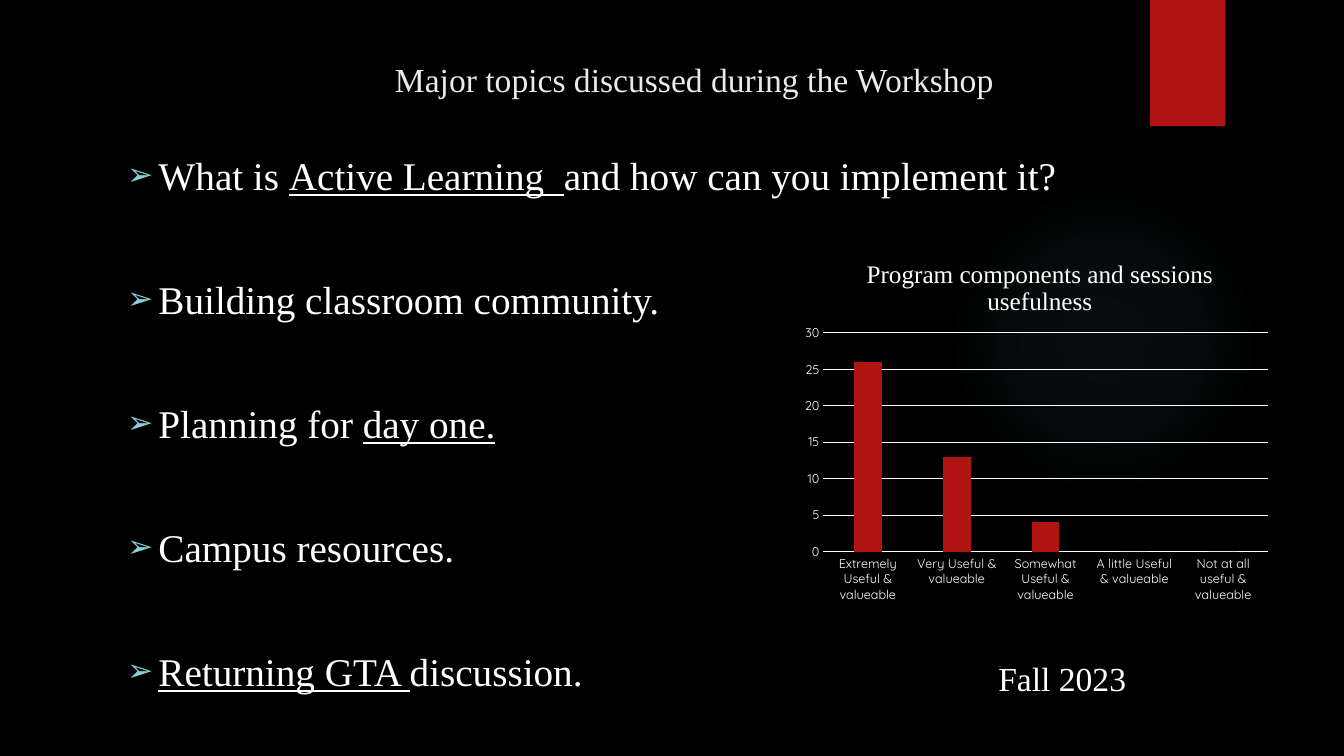
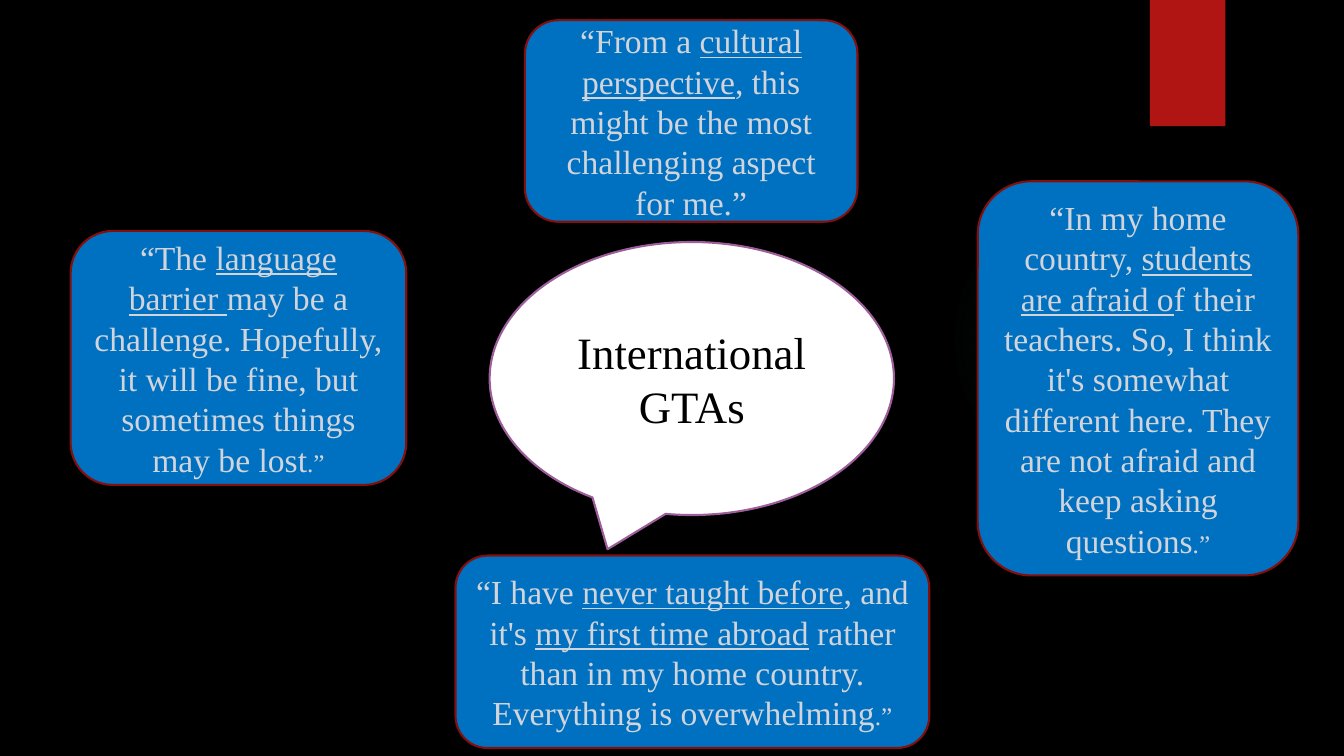
from dataclasses import dataclass

from lxml import etree
from pptx import Presentation
from pptx.chart.data import CategoryChartData
from pptx.dml.color import RGBColor
from pptx.enum.chart import XL_CHART_TYPE, XL_TICK_MARK
from pptx.enum.shapes import MSO_SHAPE
from pptx.enum.text import MSO_ANCHOR, MSO_AUTO_SIZE, PP_ALIGN
from pptx.oxml import parse_xml
from pptx.oxml.ns import nsdecls, qn
from pptx.util import Cm, Pt


@dataclass(frozen=True)
class Theme:
    """Colours, fonts and type sizes shared by the slides."""

    background: str = "000000"
    accent: str = "B01513"
    glow: str = "50B9C1"
    title: str = "EBEBEB"
    light: str = "FFFFFF"
    dark: str = "000000"
    bullet: str = "8AD0D6"
    quote: str = "D1D5DB"
    quote_fill: str = "0070C0"
    quote_line: str = "82100E"
    callout_line: str = "9E5E9B"
    font: str = "Times New Roman"
    chart_font: str = "Quicksand"
    callout_size: int = 32
    body_size: int = 28
    text_size: int = 24
    small_size: int = 18
    axis_size: int = 9


THEME = Theme()

TOPICS = (
    "What is _Active Learning  _and how can you implement it?",
    "Building classroom community.",
    "Planning for _day one._",
    "Campus resources.",
    "_Returning GTA _discussion.",
)

USEFULNESS = {
    "Extremely Useful & valueable": 26,
    "Very Useful & valueable": 13,
    "Somewhat Useful & valueable": 4,
    "A little Useful & valueable": 0,
    "Not at all useful & valueable": 0,
}

QUOTES = (
    ((24.64, 4.57, 8.08, 9.93),
     "“In my home country, _students are afraid o_f their teachers. So, I think it's "
     "somewhat different here. They are not afraid and keep asking questions", ".”"),
    ((13.23, 0.51, 8.38, 5.08),
     "“From a _cultural perspective_, this might be the most challenging aspect for me.”", ""),
    ((1.78, 5.82, 8.46, 6.4),
     "“The _language barrier _may be a challenge. Hopefully, it will be fine, but "
     "sometimes things may be lost", ".”"),
    ((11.48, 14, 11.94, 4.85),
     "“I have _never taught before_, and it's _my first time abroad_ rather than in my "
     "home country. Everything is overwhelming", ".”"),
)


def lengths(box):
    """Turn a box in centimetres into lengths."""
    return [Cm(value) for value in box]


def style_font(font, size, color, name=THEME.font):
    """Set the size, colour and typeface of a font."""
    font.size = Pt(size)
    font.name = name
    font.color.rgb = RGBColor.from_string(color)


def write_runs(paragraph, text, size, color):
    """Write text whose parts between underscores are underlined."""
    for index, part in enumerate(text.split("_")):
        if part:
            run = paragraph.add_run()
            run.text = part
            style_font(run.font, size, color)
            if index % 2:
                run.font.underline = True


def add_bullet(paragraph):
    """Give a paragraph an arrow bullet with a hanging indent."""
    properties = paragraph._p.get_or_add_pPr()
    properties.set("marL", str(Cm(2.06)))
    properties.set("indent", str(Cm(-0.79)))
    color = etree.SubElement(properties, qn("a:buClr"))
    etree.SubElement(color, qn("a:srgbClr"), val=THEME.bullet)
    etree.SubElement(properties, qn("a:buSzPct"), val="80000")
    etree.SubElement(properties, qn("a:buChar"), char="➢")


def add_box(slide, kind, box, fill, line=None):
    """Add a filled preset shape, outlined when a line colour is given."""
    shape = slide.shapes.add_shape(kind, *lengths(box))
    shape.shadow.inherit = False
    shape.fill.solid()
    shape.fill.fore_color.rgb = RGBColor.from_string(fill)
    if line:
        shape.line.color.rgb = RGBColor.from_string(line)
        shape.line.width = Pt(1.5)
    else:
        shape.line.fill.background()
    return shape


def add_text_shape(slide, kind, box, fill, line, text, size, color, closing=""):
    """Add a shape with centred text and an optional smaller closing."""
    frame = add_box(slide, kind, box, fill, line).text_frame
    frame.word_wrap = True
    frame.vertical_anchor = MSO_ANCHOR.MIDDLE
    paragraph = frame.paragraphs[0]
    paragraph.alignment = PP_ALIGN.CENTER
    write_runs(paragraph, text, size, color)
    write_runs(paragraph, closing, THEME.small_size, color)


def fade_fill(shape, color):
    """Replace a solid fill with a faint radial glow."""
    stops = "".join(
        f'<a:gs pos="{position}000"><a:srgbClr val="{color}">'
        f'<a:alpha val="{alpha}000"/></a:srgbClr></a:gs>'
        for position, alpha in ((0, 7), (36, 6), (69, 0))
    )
    gradient = parse_xml(
        f'<a:gradFill {nsdecls("a")}><a:gsLst>{stops}</a:gsLst><a:path path="circle">'
        '<a:fillToRect l="50000" t="50000" r="50000" b="50000"/></a:path></a:gradFill>'
    )
    properties = shape.element.spPr
    properties.replace(properties.find(qn("a:solidFill")), gradient)


def decorate_master(presentation, slide):
    """Put the background, glow and red band on the slide master."""
    master = presentation.slide_master
    master.background.fill.solid()
    master.background.fill.fore_color.rgb = RGBColor.from_string(THEME.background)
    glow = add_box(slide, MSO_SHAPE.OVAL, (23.9, 4.65, 7.82, 7.82), THEME.glow)
    fade_fill(glow, THEME.glow)
    band = add_box(slide, MSO_SHAPE.RECTANGLE, (28.98, 0, 1.9, 3.18), THEME.accent)
    for offset, shape in enumerate((glow, band)):
        shape.element.xpath(".//p:cNvPr")[0].set("id", str(20 + offset))
        master.shapes.element.insert(2 + offset, shape.element)


def place_placeholder(placeholder, box):
    """Move a placeholder and return its text frame without autofit."""
    placeholder.left, placeholder.top, placeholder.width, placeholder.height = lengths(box)
    placeholder.text_frame.auto_size = MSO_AUTO_SIZE.NONE
    return placeholder.text_frame


def fill_title(slide, text):
    """Write the slide title."""
    frame = place_placeholder(slide.shapes.title, (9.7, 1.37, 16, 1.22))
    frame.vertical_anchor = MSO_ANCHOR.MIDDLE
    paragraph = frame.paragraphs[0]
    paragraph.alignment = PP_ALIGN.JUSTIFY
    write_runs(paragraph, text, THEME.text_size, THEME.title)


def fill_topics(slide, topics):
    """Write the bulleted topics in the body placeholder."""
    frame = place_placeholder(slide.placeholders[1], (1.68, 2.34, 26.47, 15.06))
    frame.margin_top = Cm(1.47)
    frame.vertical_anchor = MSO_ANCHOR.TOP
    for index, topic in enumerate(topics):
        paragraph = frame.add_paragraph() if index else frame.paragraphs[0]
        paragraph.level = 1
        paragraph.space_before = Pt(55 if index else 0)
        add_bullet(paragraph)
        write_runs(paragraph, topic, THEME.body_size, THEME.light)


def set_layout(element, **shares):
    """Place a chart part by shares of the chart's size."""
    layout = element.find(qn("c:layout"))
    if layout is None:
        layout = element.makeelement(qn("c:layout"))
        element.insert(0, layout)
    manual = etree.SubElement(layout, qn("c:manualLayout"))
    if "w" in shares:
        etree.SubElement(manual, qn("c:layoutTarget"), val="inner")
    for axis in "xy":
        etree.SubElement(manual, qn(f"c:{axis}Mode"), val="edge")
    for name, share in shares.items():
        etree.SubElement(manual, qn(f"c:{name}"), val=str(share))


def style_axis(axis, line_format):
    """Set an axis's labels, ticks and visible line."""
    axis.major_tick_mark = axis.minor_tick_mark = XL_TICK_MARK.NONE
    style_font(axis.tick_labels.font, THEME.axis_size, THEME.light, THEME.chart_font)
    line_format.line.color.rgb = RGBColor.from_string(THEME.light)
    line_format.line.width = Pt(0.75)


def add_column_chart(slide, box, title, values):
    """Add a single-series column chart."""
    data = CategoryChartData()
    data.categories = list(values)
    data.add_series("Series 1", list(values.values()))
    chart = slide.shapes.add_chart(
        XL_CHART_TYPE.COLUMN_CLUSTERED, *lengths(box), data).chart
    style_font(chart.font, 10, THEME.light, THEME.chart_font)
    chart.has_legend = False
    paragraph = chart.chart_title.text_frame.paragraphs[0]
    write_runs(paragraph, title, THEME.small_size, THEME.light)
    paragraph.runs[0].font.bold = False
    set_layout(chart.chart_title.element, x=0.14, y=0.05)
    set_layout(chart.element.find(f".//{qn('c:plotArea')}"), x=0.06, y=0.26, w=0.92, h=0.58)

    plot = chart.plots[0]
    plot.gap_width = 219
    plot.overlap = -27
    plot.vary_by_categories = False
    plot.series[0].format.fill.solid()
    plot.series[0].format.fill.fore_color.rgb = RGBColor.from_string(THEME.accent)

    style_axis(chart.category_axis, chart.category_axis.format)
    value_axis = chart.value_axis
    style_axis(value_axis, value_axis.major_gridlines.format)
    value_axis.format.line.fill.background()
    value_axis.minimum_scale, value_axis.maximum_scale, value_axis.major_unit = 0, 30, 5


def add_label(slide, box, text):
    """Add a centred line of text."""
    frame = slide.shapes.add_textbox(*lengths(box)).text_frame
    frame.word_wrap = True
    frame.auto_size = MSO_AUTO_SIZE.SHAPE_TO_FIT_TEXT
    paragraph = frame.paragraphs[0]
    paragraph.alignment = PP_ALIGN.CENTER
    write_runs(paragraph, text, THEME.text_size, THEME.light)


def build_topics(slide):
    """Build the workshop topics slide."""
    fill_title(slide, "Major topics discussed during the Workshop")
    fill_topics(slide, TOPICS)
    add_column_chart(slide, (20.02, 5.92, 12.17, 9.5),
                     "Program components and sessions usefulness", USEFULNESS)
    add_label(slide, (24.66, 16.46, 4.22, 1.27), "Fall 2023")


def build_quotes(slide):
    """Build the slide of quotes around a speech bubble."""
    add_text_shape(slide, MSO_SHAPE.OVAL_CALLOUT, (12.34, 6.1, 10.19, 6.88), THEME.light,
                   THEME.callout_line, "International GTAs", THEME.callout_size, THEME.dark)
    for box, text, closing in QUOTES:
        add_text_shape(slide, MSO_SHAPE.ROUNDED_RECTANGLE, box, THEME.quote_fill,
                       THEME.quote_line, text, THEME.text_size, THEME.quote, closing)


def main():
    """Build and save the presentation."""
    presentation = Presentation()
    presentation.slide_width, presentation.slide_height = Cm(33.87), Cm(19.05)
    layouts = presentation.slide_layouts
    topics_slide = presentation.slides.add_slide(layouts.get_by_name("Title and Content"))
    decorate_master(presentation, topics_slide)
    build_topics(topics_slide)
    build_quotes(presentation.slides.add_slide(layouts.get_by_name("Blank")))
    presentation.save("out.pptx")


if __name__ == "__main__":
    main()
